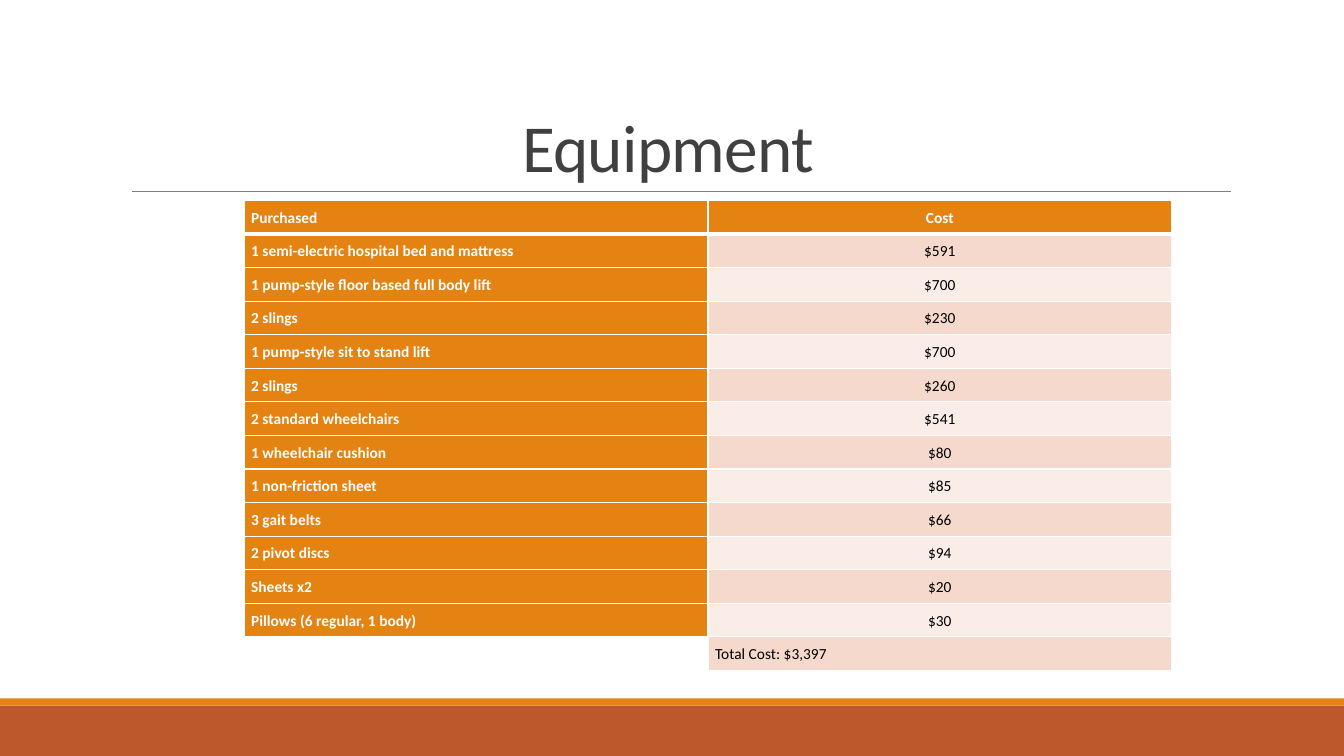
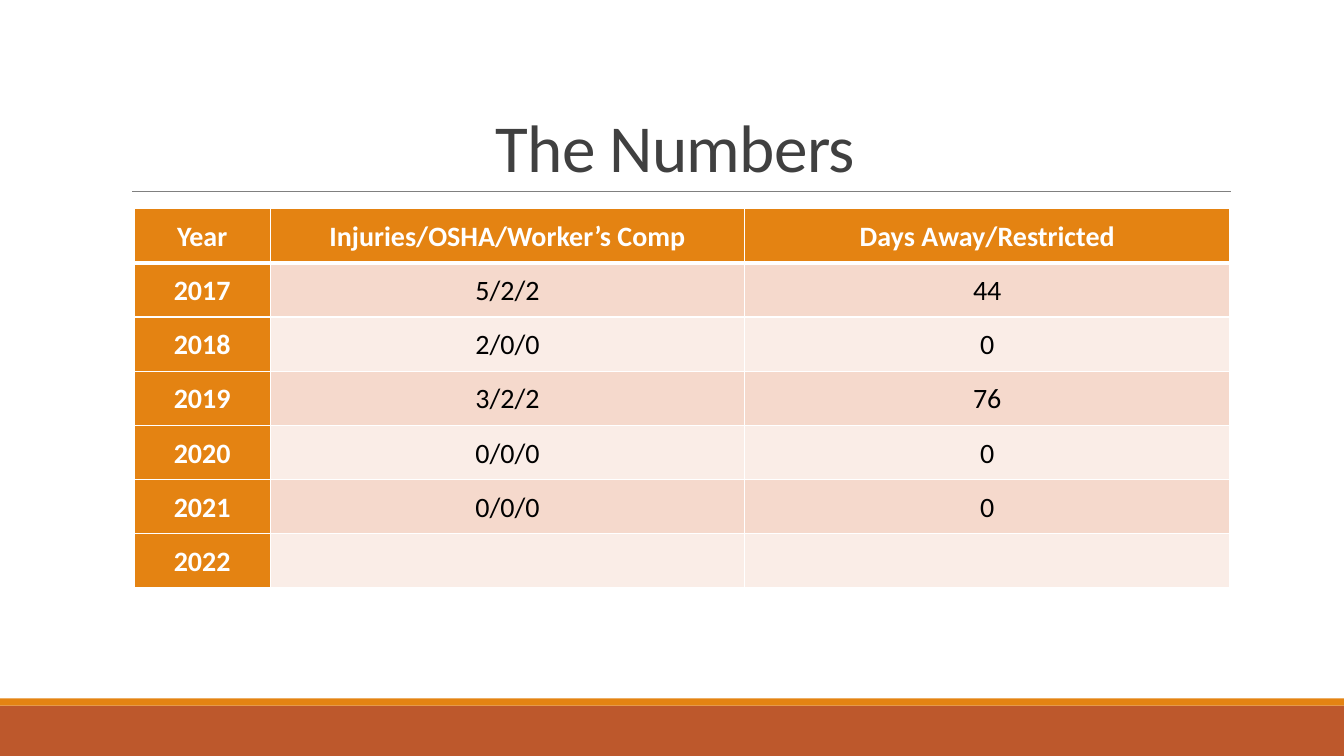
from lxml.etree import SubElement
from pptx import Presentation
from pptx.dml.color import RGBColor
from pptx.enum.shapes import MSO_CONNECTOR, MSO_SHAPE
from pptx.enum.text import MSO_ANCHOR, MSO_AUTO_SIZE, PP_ALIGN
from pptx.oxml.ns import qn
from pptx.util import Cm, Pt

RUST = RGBColor(0xBD, 0x58, 0x2C)
ORANGE = RGBColor(0xE4, 0x83, 0x12)
GREY = RGBColor(0x80, 0x80, 0x80)
CHARCOAL = RGBColor(0x40, 0x40, 0x40)
WHITE = RGBColor(0xFF, 0xFF, 0xFF)
BLACK = RGBColor(0, 0, 0)
PALE = RGBColor(0xFA, 0xED, 0xE7)
PEACH = RGBColor(0xF5, 0xD9, 0xCC)
LEFT, CENTER = PP_ALIGN.LEFT, PP_ALIGN.CENTER

# Slide contents: position, column widths and height are in centimetres
SLIDES = [
    dict(
        title="Equipment ", left=6.15, top=5.05, height=11.85,
        widths=[11.69, 11.69], size=11, label_align=LEFT,
        rows=[
            ("Purchased", "Cost"),
            ("1 semi-electric hospital bed and mattress", "$591"),
            ("1 pump-style floor based full body lift", "$700"),
            ("2 slings", "$230"),
            ("1 pump-style sit to stand lift", "$700"),
            ("2 slings", "$260"),
            ("2 standard wheelchairs", "$541"),
            ("1 wheelchair cushion", "$80"),
            ("1 non-friction sheet", "$85"),
            ("3 gait belts", "$66"),
            ("2 pivot discs", "$94"),
            ("Sheets x2", "$20"),
            ("Pillows (6 regular, 1 body)", "$30"),
            ("", "Total Cost: $3,397"),
        ],
    ),
    dict(
        title="The Numbers", left=3.38, top=5.26, height=9.55,
        widths=[3.43, 11.96, 12.22], size=20, label_align=CENTER,
        rows=[
            ("Year", "Injuries/OSHA/Worker’s Comp", "Days Away/Restricted"),
            ("2017", "5/2/2", "44"),
            ("2018", "2/0/0", "0"),
            ("2019", "3/2/2", "76"),
            ("2020", "0/0/0", "0"),
            ("2021", "0/0/0", "0"),
            ("2022", "", ""),
        ],
    ),
]


def write_text(frame, text, size, color, bold=False, align=CENTER, spacing=1.07):
    paragraph = frame.paragraphs[0]
    paragraph.alignment = align
    paragraph.line_spacing = spacing
    run = paragraph.add_run()
    run.text = text
    run.font.name = "Calibri"
    run.font.size = Pt(size)
    run.font.bold = bold
    run.font.color.rgb = color


def add_borders(cell_xml, widths):
    """Put white borders, given in points by side, ahead of the cell's fill."""
    properties = cell_xml.get_or_add_tcPr()
    for position, (side, width) in enumerate(widths.items()):
        border = SubElement(properties, qn(f"a:ln{side}"), w=str(Pt(width)))
        fill = SubElement(border, qn("a:solidFill"))
        SubElement(fill, qn("a:srgbClr"), val=str(WHITE))
        properties.insert(position, border)


prs = Presentation()
prs.slide_width, prs.slide_height = Cm(33.87), Cm(19.05)
layout = prs.slide_layouts[5]
slides = [prs.slides.add_slide(layout) for _ in SLIDES]

# Shared layout: title only, with bottom bands and a rule under the title
for placeholder in list(layout.placeholders)[1:]:
    layout.shapes.element.remove(placeholder.element)

decorations = []
for top, height, color in [(17.78, 1.27, RUST), (17.6, 0.18, ORANGE)]:
    band = slides[0].shapes.add_shape(
        MSO_SHAPE.RECTANGLE, 0, Cm(top), prs.slide_width, Cm(height))
    band.shadow.inherit = False
    band.fill.solid()
    band.fill.fore_color.rgb = color
    band.line.fill.background()
    decorations.append(band)

title_rule = slides[0].shapes.add_connector(
    MSO_CONNECTOR.STRAIGHT, Cm(3.33), Cm(4.83), Cm(31.01), Cm(4.83))
title_rule.line.color.rgb = GREY
title_rule.line.width = Pt(0.5)
SubElement(title_rule.element.spPr, qn("a:effectLst"))
decorations.append(title_rule)

for decoration in decorations:
    layout.shapes.element.append(decoration.element)

for slide, content in zip(slides, SLIDES):
    # Title
    title = slide.shapes.title
    title.left, title.top = Cm(3.05), Cm(0.79)
    title.width, title.height = Cm(27.94), Cm(4.04)
    title.text_frame.word_wrap = True
    title.text_frame.auto_size = MSO_AUTO_SIZE.NONE
    title.text_frame.vertical_anchor = MSO_ANCHOR.BOTTOM
    write_text(title.text_frame, content["title"], 48, CHARCOAL, spacing=0.85)
    for run_format in title.element.iter(qn("a:rPr")):
        run_format.set("spc", "-50")

    # Table grid
    rows, widths = content["rows"], content["widths"]
    frame = slide.shapes.add_table(
        len(rows), len(widths), Cm(content["left"]), Cm(content["top"]),
        Cm(sum(widths)), Cm(content["height"]))
    table = frame.table
    table.first_row = table.horz_banding = False
    for column, width in zip(table.columns, widths):
        column.width = Cm(width)

    # Table cells: orange header row and label column, banded values
    cells_xml = list(frame.element.iter(qn("a:tc")))
    for index, cell in enumerate(table.iter_cells()):
        row, col = divmod(index, len(widths))
        text = rows[row][col]
        is_heading = row == 0 or col == 0
        cell.margin_left = cell.margin_right = Cm(0.18)
        cell.margin_top = cell.margin_bottom = 0
        cell.vertical_anchor = MSO_ANCHOR.MIDDLE
        if is_heading and not text:
            cell.fill.background()
        else:
            cell.fill.solid()
            band_color = PEACH if row % 2 else PALE
            cell.fill.fore_color.rgb = ORANGE if is_heading else band_color
        add_borders(cells_xml[index], {
            "L": 1, "R": 1, "T": 3 if row == 1 else 1, "B": 3 if row == 0 else 1})
        if text:
            is_total = text.startswith("Total")
            write_text(
                cell.text_frame, text, content["size"],
                WHITE if is_heading else BLACK, bold=is_heading,
                align=LEFT if is_total else content["label_align"] if col == 0 else CENTER)

prs.save("out.pptx")
